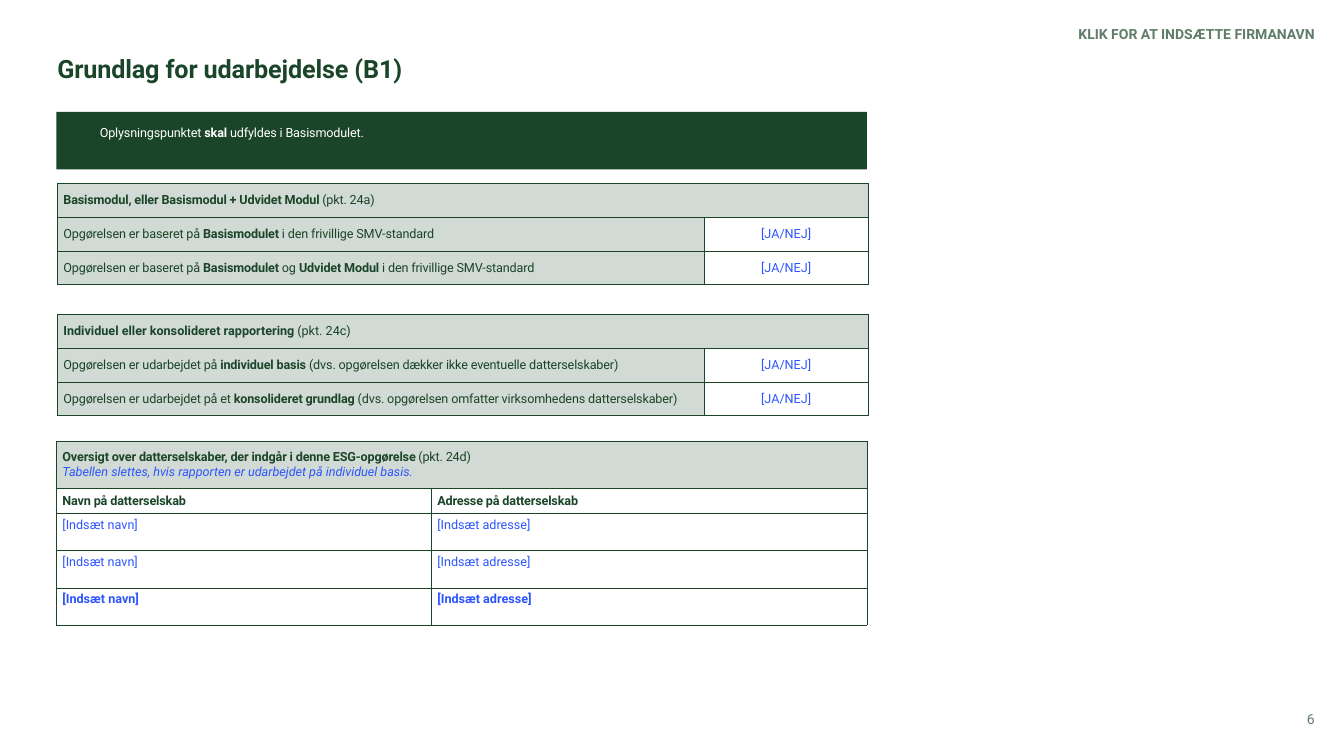
from dataclasses import dataclass

from lxml import etree
from pptx import Presentation
from pptx import util as u
from pptx.dml.color import RGBColor
from pptx.enum import shapes, text
from pptx.oxml import ns

FOREST = RGBColor(0x1B, 0x45, 0x28)
SAGE = RGBColor(0x5F, 0x7D, 0x69)
MIST = RGBColor(0xD1, 0xDA, 0xD4)
BLUE = RGBColor(0x2D, 0x55, 0xFF)
WHITE = RGBColor(0xFF, 0xFF, 0xFF)
FONT = "Roboto"
TOP, MIDDLE = text.MSO_ANCHOR.TOP, text.MSO_ANCHOR.MIDDLE
LEFT, CENTER, RIGHT = text.PP_ALIGN.LEFT, text.PP_ALIGN.CENTER, text.PP_ALIGN.RIGHT


@dataclass
class Span:
    words: str
    bold: bool = False
    color: RGBColor = FOREST
    italic: bool = False
    size: float = 9
    spacing: int = 0


@dataclass
class Entry:
    lines: list[list[Span]]
    fill: RGBColor = WHITE
    align: text.PP_ALIGN = LEFT
    anchor: text.MSO_ANCHOR = MIDDLE


@dataclass
class Grid:
    left: float
    top: float
    columns: list[float]
    heights: list[float]
    rows: list[list[Entry]]


def tight(words: str, bold: bool = False, color: RGBColor = FOREST, size: float = 9) -> Span:
    return Span(words, bold, color, size=size, spacing=-10)


def write(frame, lines: list[list[Span]], align: text.PP_ALIGN = LEFT, leading: float | None = None) -> None:
    for index, spans in enumerate(lines):
        para = frame.add_paragraph() if index else frame.paragraphs[0]
        para.alignment = align
        if leading:
            para.line_spacing = leading
        for item in spans:
            span = para.add_run()
            span.text = item.words
            span.font.name = FONT
            span.font.size = u.Pt(item.size)
            span.font.bold = item.bold
            span.font.italic = item.italic
            span.font.color.rgb = item.color
            if item.spacing:
                span._r.get_or_add_rPr().set("spc", str(item.spacing))


def set_insets(frame, left: float, top: float, right: float, bottom: float) -> None:
    frame.margin_left, frame.margin_top = u.Pt(left), u.Pt(top)
    frame.margin_right, frame.margin_bottom = u.Pt(right), u.Pt(bottom)


def outline_cell(cell) -> None:
    properties = cell._tc.get_or_add_tcPr()
    for side in ("a:lnL", "a:lnR", "a:lnT", "a:lnB"):
        line = etree.SubElement(properties, ns.qn(side), w=str(u.Pt(0.5)))
        paint = etree.SubElement(line, ns.qn("a:solidFill"))
        etree.SubElement(paint, ns.qn("a:srgbClr"), val=str(FOREST))


def add_title(page, spans: list[Span]) -> None:
    title = page.shapes.title
    title.left, title.top = u.Pt(41), u.Pt(40.3)
    title.width, title.height = u.Pt(879), u.Pt(19.4)
    frame = title.text_frame
    frame.vertical_anchor = MIDDLE
    frame.auto_size = text.MSO_AUTO_SIZE.NONE
    set_insets(frame, 0, 0, 0, 0)
    write(frame, [spans], leading=0.9)


def add_banner(page, spans: list[Span]) -> None:
    banner = page.shapes.add_shape(
        shapes.MSO_SHAPE.RECTANGLE, u.Pt(40.3), u.Pt(80), u.Pt(579), u.Pt(41)
    )
    banner.shadow.inherit = False
    banner.fill.solid()
    banner.fill.fore_color.rgb = FOREST
    banner.line.fill.background()
    frame = banner.text_frame
    frame.word_wrap = True
    frame.vertical_anchor = TOP
    set_insets(frame, 31, 8.6, 8.6, 11.5)
    write(frame, [spans], leading=1.06)


def add_label(page, top: float, width: float, span: Span) -> None:
    right_edge = 939
    box = page.shapes.add_textbox(u.Pt(right_edge - width), u.Pt(top), u.Pt(width), u.Pt(12.2))
    box.text_frame.word_wrap = True
    set_insets(box.text_frame, 0, 0, 0, 0)
    write(box.text_frame, [[span]], RIGHT)


def add_grid(page, grid: Grid) -> None:
    table = page.shapes.add_table(
        len(grid.heights), len(grid.columns), u.Pt(grid.left), u.Pt(grid.top),
        u.Pt(sum(grid.columns)), u.Pt(sum(grid.heights)),
    ).table
    table.first_row = table.horz_banding = False
    for column, width in zip(table.columns, grid.columns):
        column.width = u.Pt(width)
    for row, height in zip(table.rows, grid.heights):
        row.height = u.Pt(height)
    for cell in table.iter_cells():
        outline_cell(cell)
    for row_index, entries in enumerate(grid.rows):
        if len(entries) == 1:
            table.cell(row_index, 0).merge(table.cell(row_index, len(grid.columns) - 1))
        for column_index, entry in enumerate(entries):
            cell = table.cell(row_index, column_index)
            cell.fill.solid()
            cell.fill.fore_color.rgb = entry.fill
            cell.vertical_anchor = entry.anchor
            set_insets(cell, 4.3, 2.9, 4.3, 2.9)
            write(cell.text_frame, entry.lines, entry.align)


def answer_grid(top: float, heading: list[Span], statements: list[list[Span]]) -> Grid:
    answer = Entry([[Span("[JA/NEJ]", color=BLUE)]], align=CENTER)
    rows = [[Entry([heading], MIST)]]
    rows += [[Entry([statement], MIST), answer] for statement in statements]
    return Grid(41, top, [462.2, 116.8], [24.1] * len(rows), rows)


def subsidiary_grid() -> Grid:
    heading = Entry([
        [tight("Oversigt over datterselskaber, der indgår i denne ESG-opgørelse ", True), tight("(pkt. 24d)")],
        [Span("Tabellen slettes, hvis rapporten er udarbejdet på individuel basis.", color=BLUE, italic=True)],
    ], MIST)
    names = [Entry([[tight(words, True)]]) for words in ("Navn på datterselskab", "Adresse på datterselskab")]
    rows = [[heading], names]
    for bold in (False, False, True):
        rows.append([
            Entry([[Span(words, bold, BLUE)]], anchor=TOP)
            for words in ("[Indsæt navn]", "[Indsæt adresse]")
        ])
    return Grid(40.3, 315.3, [267.8, 311.2], [33.4, 18, 26.6, 26.6, 26.6], rows)


def main() -> None:
    deck = Presentation()
    deck.slide_width, deck.slide_height = u.Pt(960), u.Pt(540)
    page = deck.slides.add_slide(deck.slide_layouts[5])
    add_title(page, [tight("Grundlag for udarbejdelse (B1)", True, size=18)])
    add_banner(page, [
        tight("Oplysningspunktet ", color=WHITE),
        tight("skal ", True, WHITE),
        tight("udfyldes i Basismodulet.", color=WHITE),
    ])
    module_grid = answer_grid(
        131,
        [tight("Basismodul, eller Basismodul + Udvidet Modul ", True), tight("(pkt. 24a)")],
        [
            [tight("Opgørelsen er baseret på "), tight("Basismodulet", True),
             tight(" i den frivillige SMV-standard")],
            [tight("Opgørelsen er baseret på "), tight("Basismodulet", True), tight(" og "),
             tight("Udvidet Modul ", True), tight("i den frivillige SMV-standard")],
        ],
    )
    basis_grid = answer_grid(
        224.6,
        [Span("Individuel eller konsolideret rapportering", True), Span(" (pkt. 24c)")],
        [
            [tight("Opgørelsen er udarbejdet på "), tight("individuel basis ", True),
             tight("(dvs. opgørelsen dækker ikke eventuelle datterselskaber)")],
            [tight("Opgørelsen er udarbejdet på et "), tight("konsolideret grundlag ", True),
             tight("(dvs. opgørelsen omfatter virksomhedens datterselskaber)")],
        ],
    )
    for grid in (module_grid, basis_grid, subsidiary_grid()):
        add_grid(page, grid)
    add_label(page, 18, 286.6, Span("KLIK FOR AT INDSÆTTE FIRMANAVN", True, SAGE, size=10))
    add_label(page, 507.6, 216, Span("6", color=SAGE, size=10))
    deck.save("out.pptx")


if __name__ == "__main__":
    main()
